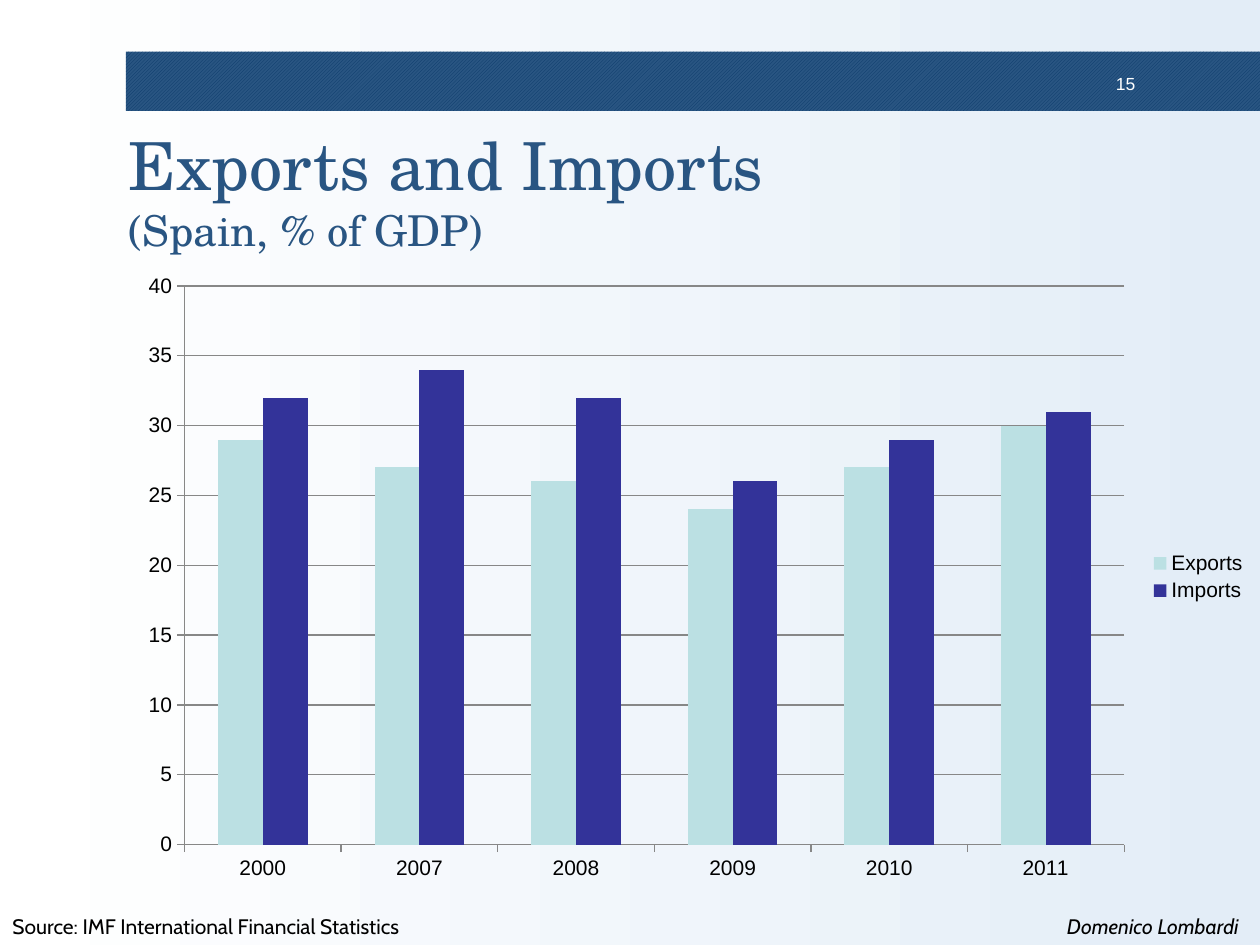
from dataclasses import dataclass, field
from typing import Any

from pptx import Presentation
from pptx.chart.data import CategoryChartData
from pptx.dml.color import RGBColor
from pptx.enum.chart import XL_CHART_TYPE, XL_LEGEND_POSITION, XL_TICK_MARK
from pptx.enum.dml import MSO_PATTERN
from pptx.enum.shapes import MSO_SHAPE
from pptx.enum.text import MSO_ANCHOR, PP_ALIGN
from pptx.util import Inches, Pt

CLUSTERED = XL_CHART_TYPE.COLUMN_CLUSTERED
LEGEND_RIGHT = XL_LEGEND_POSITION.RIGHT
TICK_OUTSIDE = XL_TICK_MARK.OUTSIDE
DIAGONAL = MSO_PATTERN.LIGHT_UPWARD_DIAGONAL
RECTANGLE = MSO_SHAPE.RECTANGLE
TOP, MIDDLE = MSO_ANCHOR.TOP, MSO_ANCHOR.MIDDLE
LEFT, CENTER, RIGHT = PP_ALIGN.LEFT, PP_ALIGN.CENTER, PP_ALIGN.RIGHT

WHITE = RGBColor(0xFF, 0xFF, 0xFF)
BLACK = RGBColor(0x00, 0x00, 0x00)
PALE_BLUE = RGBColor(0xE3, 0xED, 0xF7)
NAVY = RGBColor(0x08, 0x38, 0x68)
BLUE = RGBColor(0x29, 0x55, 0x82)
GREY = RGBColor(0x87, 0x87, 0x87)
AQUA = RGBColor(0xBB, 0xE0, 0xE3)
INDIGO = RGBColor(0x33, 0x33, 0x99)


@dataclass
class Line:
    text: str
    size: float


@dataclass
class Label:
    at: tuple[float, float, float, float]
    lines: list[Line]
    font: dict[str, Any]
    align: PP_ALIGN = LEFT
    frame: dict[str, Any] = field(default_factory=dict)


@dataclass
class Series:
    name: str
    values: list[int]
    color: RGBColor


FOOTER_FONT = {"name": "Cabin", "color": BLACK}
NO_WRAP = {"word_wrap": False}
TITLE_INSETS = {
    f"margin_{side}": Inches(0.04) for side in ("left", "right", "top", "bottom")
}
NUMBER_INSETS = {
    "margin_left": Inches(0.07),
    "margin_right": Inches(0.07),
    "margin_top": Inches(0.04),
    "margin_bottom": Inches(0.04),
}

LABELS = [
    Label((8.67, 0.54, 0.41, 0.23), [Line("15", 10)],
          {"name": "Arial", "color": WHITE}, RIGHT, NUMBER_INSETS),
    Label((0.98, 0.94, 8.05, 1.13),
          [Line("Exports and Imports ", 37.8), Line("(Spain, % of GDP)", 24.3)],
          {"name": "TeX Gyre Schola", "color": BLUE}, LEFT,
          {"vertical_anchor": MIDDLE, **TITLE_INSETS}),
    Label((0, 7.2, 3.53, 0.3),
          [Line("Source: IMF International Financial Statistics", 12)],
          FOOTER_FONT, LEFT, NO_WRAP),
    Label((8.3, 7.2, 1.7, 0.3), [Line("Domenico Lombardi", 12)],
          {**FOOTER_FONT, "italic": True}, CENTER, NO_WRAP),
]

YEARS = ["2000", "2007", "2008", "2009", "2010", "2011"]
TRADE = [
    Series("Exports", [29, 27, 26, 24, 27, 30], AQUA),
    Series("Imports", [32, 34, 32, 26, 29, 31], INDIGO),
]


def set_font(font, values: dict[str, Any]) -> None:
    for name, value in values.items():
        if name == "color":
            font.color.rgb = value
        else:
            setattr(font, name, value)


def paint_background(slide) -> None:
    fill = slide.background.fill
    fill.gradient()
    fill.gradient_angle = 0
    for stop, color, position in zip(fill.gradient_stops, (WHITE, PALE_BLUE), (0, 1)):
        stop.color.rgb = color
        stop.position = position


def add_banner(slide) -> None:
    banner = slide.shapes.add_shape(
        RECTANGLE, Inches(1), Inches(0.41), Inches(9), Inches(0.47))
    banner.shadow.inherit = False
    banner.line.fill.background()
    banner.fill.patterned()
    banner.fill.pattern = DIAGONAL
    banner.fill.fore_color.rgb = NAVY
    banner.fill.back_color.rgb = BLUE


def add_label(slide, label: Label) -> None:
    box = slide.shapes.add_textbox(*map(Inches, label.at))
    frame = {"word_wrap": True, "vertical_anchor": TOP, **label.frame}
    for name, value in frame.items():
        setattr(box.text_frame, name, value)
    para = box.text_frame.paragraphs[0]
    para.alignment = label.align
    for index, line in enumerate(label.lines):
        if index:
            para.add_line_break()
        span = para.add_run()
        span.text = line.text
        set_font(span.font, {"size": Pt(line.size), **label.font})


def add_trade_chart(slide) -> None:
    data = CategoryChartData()
    data.categories = YEARS
    for series in TRADE:
        data.add_series(series.name, series.values)
    chart = slide.shapes.add_chart(
        CLUSTERED, Inches(1), Inches(2.08), Inches(9), Inches(5), data).chart
    chart.has_title = False
    set_font(chart.font, {"name": "Arial", "size": Pt(12), "color": BLACK})
    chart.has_legend = True
    chart.legend.position = LEGEND_RIGHT
    chart.legend.include_in_layout = False

    plot = chart.plots[0]
    plot.gap_width = 150
    plot.overlap = 0
    plot.vary_by_categories = False
    for drawn, series in zip(plot.series, TRADE):
        drawn.format.fill.solid()
        drawn.format.fill.fore_color.rgb = series.color

    values = chart.value_axis
    values.minimum_scale, values.maximum_scale, values.major_unit = 0, 40, 5
    values.has_major_gridlines = True
    for axis in (chart.category_axis, values):
        axis.major_tick_mark = TICK_OUTSIDE
    for styled in (chart.category_axis, values, values.major_gridlines):
        styled.format.line.color.rgb = GREY
        styled.format.line.width = Pt(0.75)


def main() -> None:
    deck = Presentation()
    deck.slide_width, deck.slide_height = Inches(10), Inches(7.5)
    slide = deck.slides.add_slide(deck.slide_layouts[6])
    paint_background(slide)
    add_banner(slide)
    add_trade_chart(slide)
    for label in LABELS:
        add_label(slide, label)
    deck.save("out.pptx")


if __name__ == "__main__":
    main()
